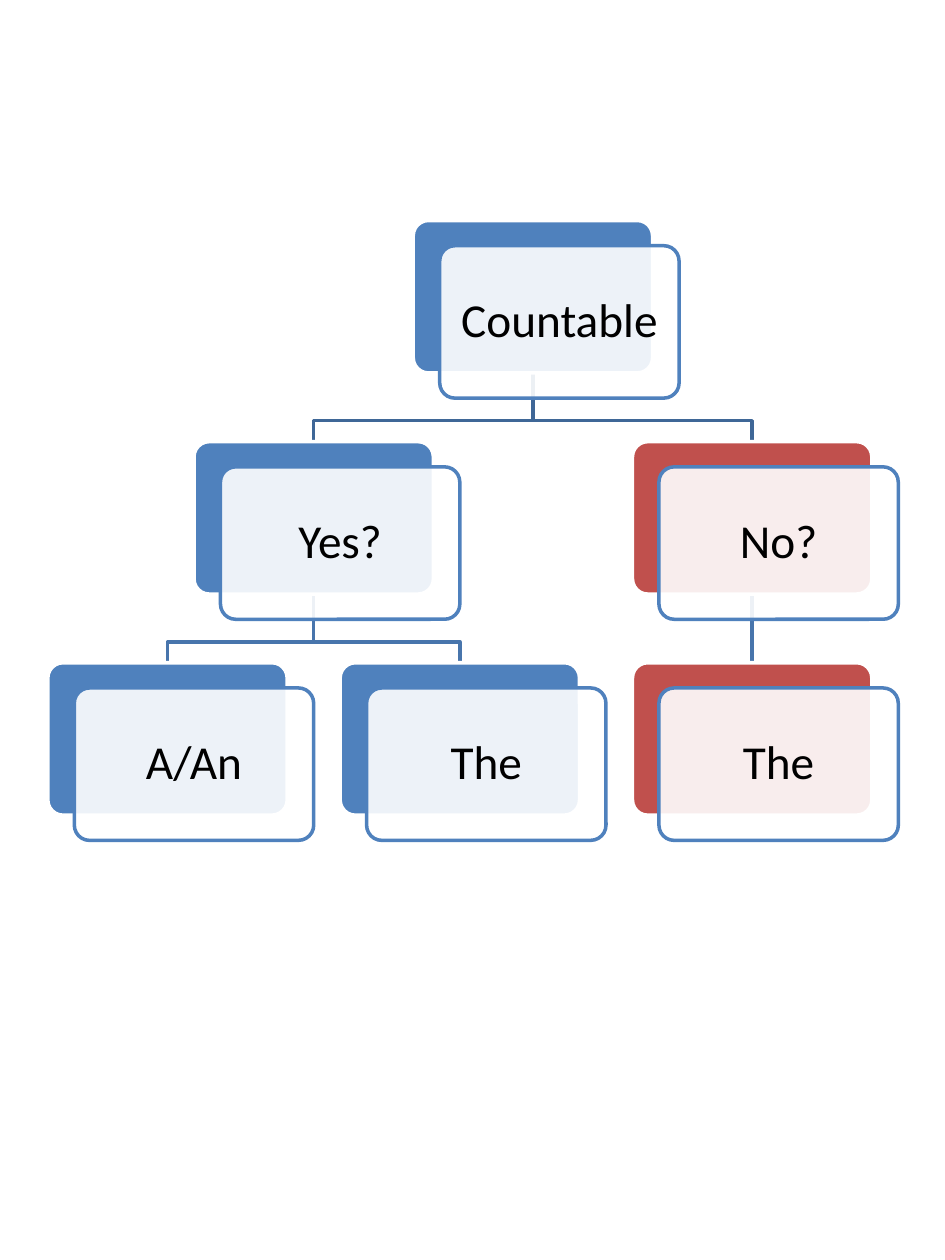
from lxml.etree import SubElement
from pptx import Presentation
from pptx.dml.color import RGBColor
from pptx.enum.shapes import MSO_CONNECTOR, MSO_SHAPE
from pptx.enum.text import MSO_ANCHOR, PP_ALIGN
from pptx.oxml.ns import qn
from pptx.util import Inches, Pt

BLUE, RED, WHITE, BLACK = "4F81BD", "C0504D", "FFFFFF", "000000"
FONT = "Calibri"

# Decision tree: key -> (text, column, row, colour of the back card)
NODES = {
    "question": ("Countable", 1.25, 0, BLUE),
    "yes": ("Yes?", 0.5, 1, BLUE),
    "a_an": ("A/An", 0, 2, BLUE),
    "yes_the": ("The", 1, 2, BLUE),
    "no": ("No?", 2, 1, RED),
    "no_the": ("The", 2, 2, RED),
}
# (parent, child, line colour)
BRANCHES = [
    ("no", "no_the", "4875AC"),
    ("question", "no", "3F6797"),
    ("yes", "yes_the", "4875AC"),
    ("yes", "a_an", "4875AC"),
    ("question", "yes", "3F6797"),
]

# Grid in inches
LEFT, TOP = 0.38, 1.75
COLUMN_STEP, ROW_STEP = 2.32, 1.755
CARD_WIDTH, CARD_HEIGHT = 1.9, 1.21
SHIFT_X, SHIFT_Y = 0.21, 0.2
BEND = 0.38  # drop from the parent to the horizontal run


def color(value):
    return RGBColor.from_string(value)


def corner(key):
    _, column, row, _ = NODES[key]
    return LEFT + column * COLUMN_STEP, TOP + row * ROW_STEP


def set_line(shape, line_color):
    shape.line.color.rgb = color(line_color)
    shape.line.width = Pt(2)


def add_branch(slide, parent, child, line_color):
    parent_x, parent_y = corner(parent)
    child_x, end_y = corner(child)
    start_x, end_x = parent_x + CARD_WIDTH / 2, child_x + CARD_WIDTH / 2
    start_y = parent_y + CARD_HEIGHT
    if start_x == end_x:
        branch = slide.shapes.add_connector(
            MSO_CONNECTOR.STRAIGHT,
            Inches(start_x), Inches(start_y), Inches(end_x), Inches(end_y))
        SubElement(branch._element.spPr, qn("a:effectLst"))
    else:
        bend_y = start_y + BEND
        builder = slide.shapes.build_freeform(
            Inches(start_x), Inches(start_y))
        corners = [(start_x, bend_y), (end_x, bend_y), (end_x, end_y)]
        builder.add_line_segments(
            [(Inches(x), Inches(y)) for x, y in corners], close=False)
        branch = builder.convert_to_shape()
        branch.fill.background()
        branch.shadow.inherit = False
    set_line(branch, line_color)


def add_card(slide, x, y, fill, line_color):
    card = slide.shapes.add_shape(
        MSO_SHAPE.ROUNDED_RECTANGLE,
        Inches(x), Inches(y), Inches(CARD_WIDTH), Inches(CARD_HEIGHT))
    card.adjustments[0] = 0.1
    card.shadow.inherit = False
    card.fill.solid()
    card.fill.fore_color.rgb = color(fill)
    set_line(card, line_color)
    return card


def add_node(slide, key):
    text, _, _, back_color = NODES[key]
    x, y = corner(key)
    add_card(slide, x, y, back_color, WHITE)

    # Front card, 90 % opaque
    front = add_card(slide, x + SHIFT_X, y + SHIFT_Y, WHITE, BLUE)
    fill_color = front._element.spPr.find(qn("a:solidFill"))[0]
    SubElement(fill_color, qn("a:alpha"), val="90000")

    # Label
    frame = front.text_frame
    frame.word_wrap = True
    frame.vertical_anchor = MSO_ANCHOR.MIDDLE
    frame.margin_left = frame.margin_right = Inches(0.07)
    frame.margin_top = frame.margin_bottom = Inches(0.07)
    paragraph = frame.paragraphs[0]
    paragraph.alignment = PP_ALIGN.CENTER
    paragraph.line_spacing = 0.9
    run = paragraph.add_run()
    run.text = text
    run.font.name = FONT
    run.font.size = Pt(27)
    run.font.color.rgb = color(BLACK)


def main():
    presentation = Presentation()
    presentation.slide_width = Inches(7.5)
    presentation.slide_height = Inches(10)
    slide = presentation.slides.add_slide(presentation.slide_layouts[6])
    for branch in BRANCHES:
        add_branch(slide, *branch)
    for key in NODES:
        add_node(slide, key)
    presentation.save("out.pptx")


if __name__ == "__main__":
    main()
